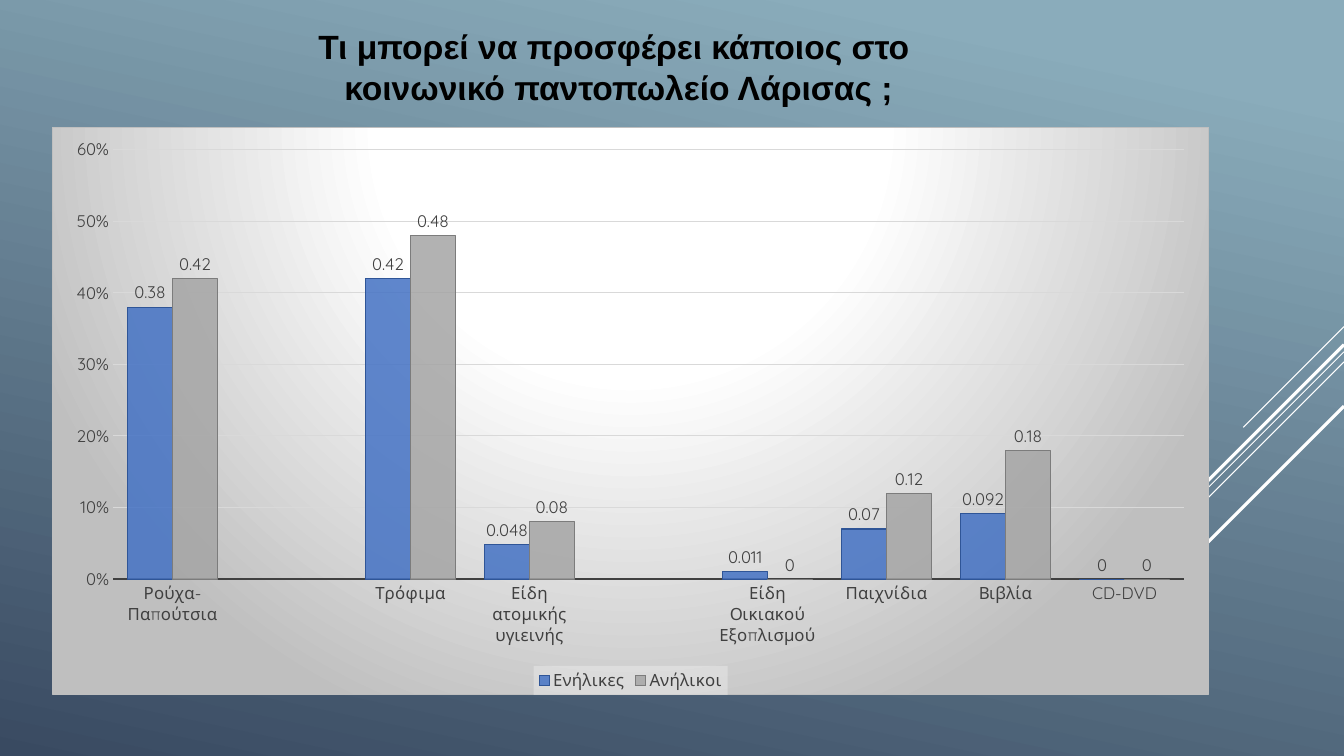
"""Build the slide on what people can offer to the Larissa social grocery."""
from pptx import Presentation
from pptx.chart.data import CategoryChartData
from pptx.dml.color import RGBColor
from pptx.enum.chart import XL_CHART_TYPE, XL_LABEL_POSITION, XL_LEGEND_POSITION, XL_TICK_MARK
from pptx.enum.shapes import MSO_CONNECTOR
from pptx.enum.text import MSO_ANCHOR, MSO_AUTO_SIZE, PP_ALIGN
from pptx.oxml import parse_xml
from pptx.oxml.ns import nsdecls, qn
from pptx.util import Inches, Pt

COLORS = {
    "sky": "8AACBB", "navy": "394A61", "white": "FFFFFF", "black": "000000",
    "text": "404040", "grid": "D9D9D9", "frame": "BFBFBF", "legend": "F2F2F2",
    "adults": "4472C4", "adults_edge": "2F5597",
    "minors": "A5A5A5", "minors_edge": "7C7C7C",
}


def set_font(font, size=12, color="text", name="Quicksand", bold=False):
    font.size, font.name, font.bold = Pt(size), name, bold
    font.color.rgb = RGBColor.from_string(COLORS[color])


def write(frame, text, align=PP_ALIGN.CENTER, **font_format):
    frame.text = text
    for paragraph in frame.paragraphs:
        paragraph.alignment = align
        paragraph.line_spacing = 1.0
        for run in paragraph.runs:
            set_font(run.font, **font_format)


prs = Presentation()
prs.slide_width, prs.slide_height = Inches(13.33), Inches(7.5)
slide = prs.slides.add_slide(prs.slide_layouts[5])

backdrop = slide.background.fill
backdrop.gradient()
backdrop.gradient_angle = 258
for stop, color, position in zip(backdrop.gradient_stops, ("sky", "navy"), (0.1, 1)):
    stop.color.rgb = RGBColor.from_string(COLORS[color])
    stop.position = position

title = slide.shapes.title
title.left, title.top = Inches(3.03), Inches(0.21)
title.width, title.height = Inches(6.21), Inches(0.91)
write(title.text_frame, "Τι μπορεί να προσφέρει κάποιος στο \nκοινωνικό παντοπωλείο Λάρισας ;",
      size=24, color="black", name="Arial", bold=True)
title.text_frame.word_wrap = False
title.text_frame.auto_size = MSO_AUTO_SIZE.SHAPE_TO_FIT_TEXT
title.text_frame.vertical_anchor = MSO_ANCHOR.TOP

for top, run_length, weight in [(3.24, 1, 0.75), (3.49, 3.26, 0.75), (3.59, 2.07, 0.75),
                                (3.42, 1.91, 2.25), (4.03, 1.39, 2.25)]:
    ray = slide.shapes.add_connector(
        MSO_CONNECTOR.STRAIGHT, Inches(13.33), Inches(top),
        Inches(13.33 - run_length), Inches(top + run_length))
    ray.line.color.rgb = RGBColor.from_string(COLORS["white"])
    ray.line.width = Pt(weight)
    ray._element.spPr.append(parse_xml(f"<a:effectLst {nsdecls('a')}/>"))

offers = CategoryChartData(number_format="General")
offers.categories = ["Ρούχα-Παπούτσια", "", "Τρόφιμα", "Είδη ατομικής υγιεινής", "",
                     "Είδη Οικιακού Εξοπλισμού", "Παιχνίδια", "Βιβλία", "CD-DVD"]
offers.add_series("Ενήλικες", [0.38, None, 0.42, 0.048, None, 0.011, 0.07, 0.092, 0])
offers.add_series("Ανήλικοι", [0.42, None, 0.48, 0.08, None, 0, 0.12, 0.18, 0])
chart = slide.shapes.add_chart(
    XL_CHART_TYPE.COLUMN_CLUSTERED, Inches(0.52), Inches(1.26),
    Inches(11.47), Inches(5.64), offers).chart
chart.has_title = False
set_font(chart.font)

plot = chart.plots[0]
plot.gap_width, plot.overlap, plot.vary_by_categories = 65, 0, False
for series, group in zip(plot.series, ("adults", "minors")):
    series.format.fill.solid()
    series.format.fill.fore_color.rgb = RGBColor.from_string(COLORS[group])
    series.format.line.color.rgb = RGBColor.from_string(COLORS[f"{group}_edge"])
    series.format.line.width = Pt(0.75)
    fill_color = series._element.spPr.find(qn("a:solidFill"))[0]
    fill_color.append(parse_xml(f'<a:alpha {nsdecls("a")} val="85000"/>'))
    labels = series.data_labels
    labels.show_value = True
    labels.position = XL_LABEL_POSITION.OUTSIDE_END
    set_font(labels.font)

for axis in (chart.category_axis, chart.value_axis):
    axis.major_tick_mark = axis.minor_tick_mark = XL_TICK_MARK.NONE
    set_font(axis.tick_labels.font)
chart.category_axis.format.line.color.rgb = RGBColor.from_string(COLORS["text"])
chart.category_axis.format.line.width = Pt(1.5)

shares = chart.value_axis
shares.minimum_scale, shares.maximum_scale, shares.major_unit = 0, 0.6, 0.1
shares.tick_labels.number_format = "0%"
shares.tick_labels.number_format_is_linked = False
shares.format.line.fill.background()
shares.major_gridlines.format.line.color.rgb = RGBColor.from_string(COLORS["grid"])
shares.major_gridlines.format.line.width = Pt(0.75)

chart.has_legend = True
chart.legend.position = XL_LEGEND_POSITION.BOTTOM
chart.legend.include_in_layout = False
set_font(chart.legend.font)
chart.legend._element.find(qn("c:overlay")).addnext(parse_xml(
    f'<c:spPr {nsdecls("c", "a")}><a:solidFill><a:srgbClr val="{COLORS["legend"]}">'
    '<a:alpha val="39000"/></a:srgbClr></a:solidFill></c:spPr>'))

plot_area = chart._chartSpace.chart.plotArea
for automatic_layout in plot_area.findall(qn("c:layout")):
    plot_area.remove(automatic_layout)
plot_area.insert(0, parse_xml(
    f'<c:layout {nsdecls("c")}><c:manualLayout><c:layoutTarget val="inner"/>'
    '<c:xMode val="edge"/><c:yMode val="edge"/><c:x val="0.052"/><c:y val="0.039"/>'
    '<c:w val="0.927"/><c:h val="0.757"/></c:manualLayout></c:layout>'))

glow_stops = "".join(
    f'<a:gs pos="{position}000"><a:srgbClr val="{COLORS[color]}"/></a:gs>'
    for position, color in [(0, "white"), (39, "white"), (100, "frame")])
chart._chartSpace.chart.addnext(parse_xml(
    f'<c:spPr {nsdecls("c", "a")}><a:gradFill><a:gsLst>{glow_stops}</a:gsLst>'
    '<a:path path="circle"><a:fillToRect l="50000" t="-80000" r="50000" b="180000"/></a:path>'
    f'</a:gradFill><a:ln w="{Pt(0.75)}"><a:solidFill><a:srgbClr val="{COLORS["frame"]}"/>'
    '</a:solidFill></a:ln></c:spPr>'))

prs.save("out.pptx")
